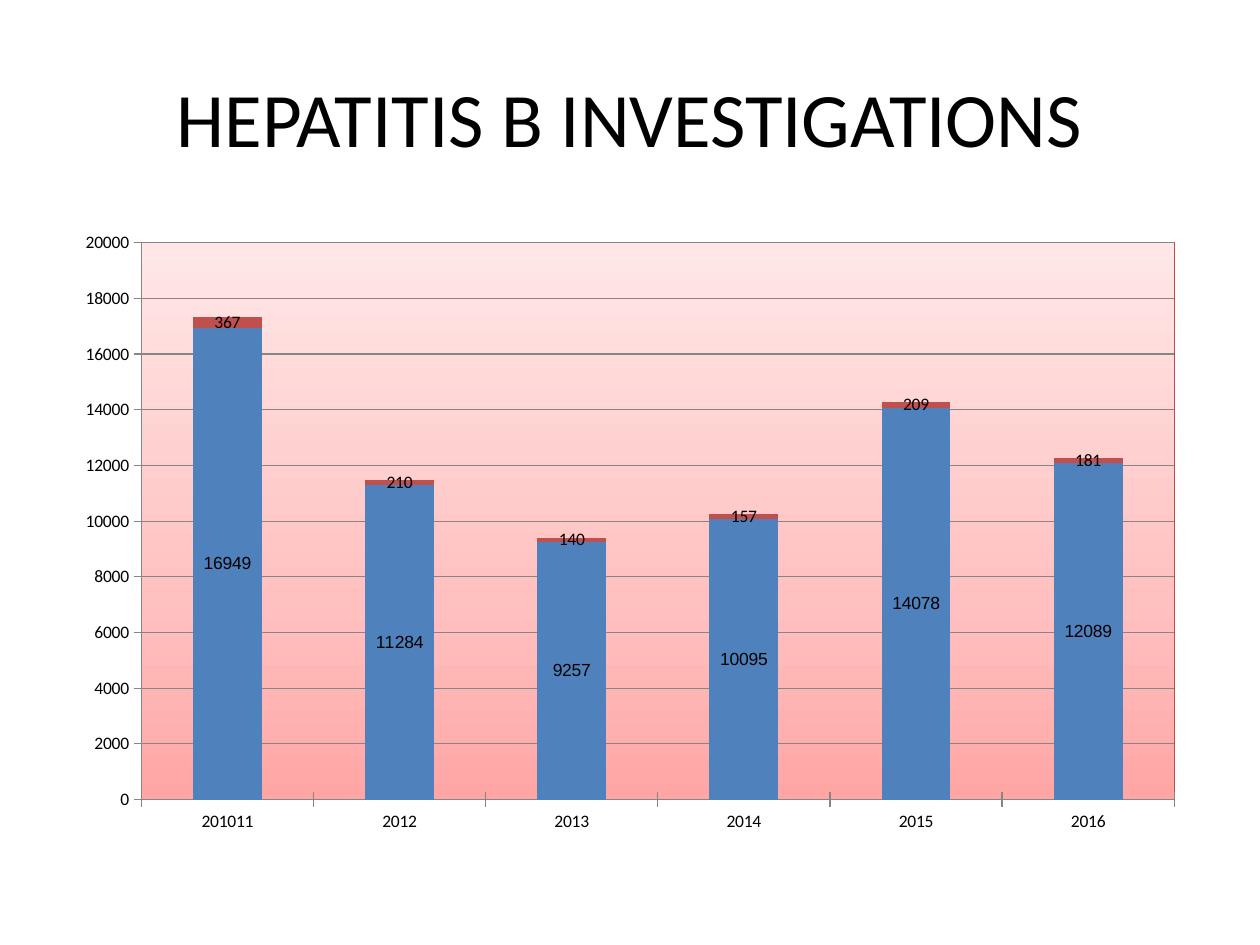
from lxml import etree
from pptx import Presentation
from pptx.chart.data import CategoryChartData
from pptx.dml.color import RGBColor
from pptx.enum.chart import XL_CHART_TYPE, XL_LABEL_POSITION, XL_TICK_MARK
from pptx.enum.text import MSO_ANCHOR, PP_ALIGN
from pptx.util import Inches, Pt

STACK = XL_CHART_TYPE.COLUMN_STACKED
MID = XL_LABEL_POSITION.CENTER
CROSS = XL_TICK_MARK.CROSS
ANCHOR = MSO_ANCHOR.MIDDLE
ALIGN = PP_ALIGN.CENTER

WIDE, HIGH = 10, 7.5
FACE = "Calibri"
YEARS = ["201011", "2012", "2013", "2014", "2015", "2016"]
SERIES = [
    ("Series 1", [16949, 11284, 9257, 10095, 14078, 12089], "4F81BD", "Arial"),
    ("Series 2", [367, 210, 140, 157, 209, 181], "C0504D", FACE),
]
STOPS = [(0, "FFA6A5"), (35, "FFC0BF"), (100, "FFE7E7")]
EDGE, GRID = "BE4B48", "868686"
SPACE = 'xmlns:c="http://schemas.openxmlformats.org/drawingml/2006/chart" ' \
        'xmlns:a="http://schemas.openxmlformats.org/drawingml/2006/main"'


def color(code):
    """Turn a hex string into a colour."""
    return RGBColor.from_string(code)


def style(font, size, name=FACE):
    """Set size, face and black ink on a font."""
    for key, value in {"size": Pt(size), "name": name}.items():
        setattr(font, key, value)
    font.color.rgb = color("000000")


def shade(chart):
    """Give the plot area its gradient and edge."""
    stops = "".join(
        f'<a:gs pos="{at * 1000}"><a:srgbClr val="{code}"/></a:gs>'
        for at, code in STOPS)
    area = chart.plots[0]._element.getparent()
    area.append(etree.fromstring(
        f'<c:spPr {SPACE}><a:gradFill rotWithShape="1"><a:gsLst>{stops}</a:gsLst>'
        '<a:lin ang="16200000" scaled="1"/></a:gradFill>'
        f'<a:ln w="9525"><a:solidFill><a:srgbClr val="{EDGE}"/></a:solidFill></a:ln>'
        '</c:spPr>'))


def title(slide, box):
    """Place the centred heading in its box."""
    frame = slide.shapes.add_textbox(*box).text_frame
    for key, value in {"word_wrap": True, "vertical_anchor": ANCHOR}.items():
        setattr(frame, key, value)
    para = frame.paragraphs[0]
    para.alignment = ALIGN
    run = para.add_run()
    run.text = "HEPATITIS B INVESTIGATIONS"
    style(run.font, 44)


def graph(slide, box):
    """Place the stacked columns in their box."""
    data = CategoryChartData()
    data.categories = YEARS
    for name, vals, _, _ in SERIES:
        data.add_series(name, vals)
    chart = slide.shapes.add_chart(STACK, *box, data).chart
    style(chart.font, 10)
    chart.has_legend = chart.has_title = False
    plot = chart.plots[0]
    for key, value in {"gap_width": 150, "overlap": 100,
                       "vary_by_categories": False}.items():
        setattr(plot, key, value)
    for item, (_, _, code, face) in zip(plot.series, SERIES):
        item.format.fill.solid()
        item.format.fill.fore_color.rgb = color(code)
        tags = item.data_labels
        tags.show_value = True
        tags.position = MID
        style(tags.font, 10, face)
    rise = chart.value_axis
    for key, value in {"minimum_scale": 0, "maximum_scale": 20000,
                       "major_unit": 2000, "has_major_gridlines": True}.items():
        setattr(rise, key, value)
    for axis in (chart.category_axis, rise):
        axis.major_tick_mark = CROSS
        axis.format.line.color.rgb = color(GRID)
    rise.major_gridlines.format.line.color.rgb = color(GRID)
    shade(chart)


def main():
    """Build and save the slide."""
    deck = Presentation()
    deck.slide_width, deck.slide_height = Inches(WIDE), Inches(HIGH)
    slide = deck.slides.add_slide(deck.slide_layouts[6])
    left, width = Inches(WIDE * 0.05), Inches(WIDE * 0.9)
    title(slide, (left, Inches(HIGH * 0.04), width, Inches(1.25)))
    graph(slide, (left, Inches(1.75), width, Inches(HIGH * 0.66)))
    deck.save("out.pptx")


if __name__ == "__main__":
    main()
